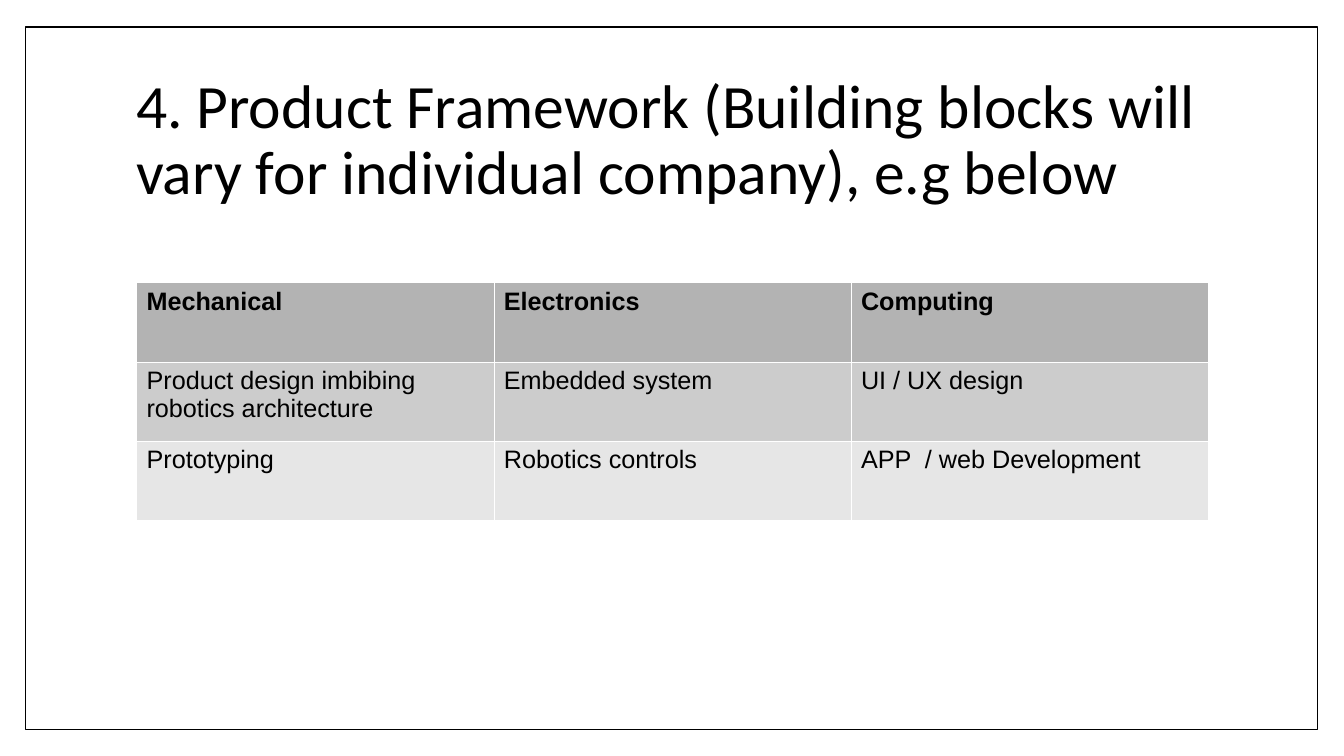
from lxml import etree
from pptx import Presentation
from pptx.dml.color import RGBColor
from pptx.enum.shapes import MSO_SHAPE
from pptx.enum.text import MSO_ANCHOR, MSO_AUTO_SIZE, PP_ALIGN
from pptx.oxml.ns import qn
from pptx.util import Pt

RECTANGLE = MSO_SHAPE.RECTANGLE
MIDDLE = MSO_ANCHOR.MIDDLE
NO_AUTOFIT = MSO_AUTO_SIZE.NONE
LEFT = PP_ALIGN.LEFT
TITLE_ONLY = 5

COLORS = {
    "black": "000000",
    "white": "FFFFFF",
    "header": "B3B3B3",
    "odd": "CCCCCC",
    "even": "E6E6E6",
}

FRAMEWORK = [
    ["Mechanical", "Electronics", "Computing"],
    ["Product design imbibing robotics architecture", "Embedded system", "UI / UX design"],
    ["Prototyping", "Robotics controls", "APP  / web Development"],
]


def rgb(name):
    return RGBColor.from_string(COLORS[name])


class SlideBuilder:
    title_font = "Calibri"
    body_font = "Arial"
    border_width = Pt(0.06)

    def __init__(self, prs):
        self.s = prs.slides.add_slide(prs.slide_layouts[TITLE_ONLY])

    def style(self, p, name, size, bold=False):
        p.alignment = LEFT
        p.font.name = name
        p.font.size = Pt(size)
        p.font.bold = bold
        p.font.color.rgb = rgb("black")

    def frame(self, x, y, w, h):
        sp = self.s.shapes.add_shape(RECTANGLE, Pt(x), Pt(y), Pt(w), Pt(h))
        sp.shadow.inherit = False
        sp.fill.solid()
        sp.fill.fore_color.rgb = rgb("white")
        sp.line.color.rgb = rgb("black")
        sp.line.width = Pt(1)
        self.s.shapes.element.insert(2, sp.element)

    def title(self, text, x, y, w, h):
        sp = self.s.shapes.title
        sp.left, sp.top, sp.width, sp.height = Pt(x), Pt(y), Pt(w), Pt(h)
        tf = sp.text_frame
        tf.text = text
        tf.word_wrap = True
        tf.auto_size = NO_AUTOFIT
        tf.vertical_anchor = MIDDLE
        p = tf.paragraphs[0]
        p.line_spacing = 0.9
        self.style(p, self.title_font, 44)

    def borders(self, cell):
        tc_pr = cell._tc.get_or_add_tcPr()
        for side in ("lnL", "lnR", "lnT", "lnB"):
            ln = etree.SubElement(tc_pr, qn(f"a:{side}"), w=str(self.border_width))
            fill = etree.SubElement(ln, qn("a:solidFill"))
            etree.SubElement(fill, qn("a:srgbClr"), val=COLORS["white"])

    def table(self, rows, fills, x, y, w, h):
        shape = self.s.shapes.add_table(len(rows), len(rows[0]), Pt(x), Pt(y), Pt(w), Pt(h))
        for r, (texts, fill) in enumerate(zip(rows, fills)):
            for c, text in enumerate(texts):
                cell = shape.table.cell(r, c)
                cell.text = text
                self.style(cell.text_frame.paragraphs[0], self.body_font, 18, bold=r == 0)
                self.borders(cell)
                cell.fill.solid()
                cell.fill.fore_color.rgb = rgb(fill)


def main():
    prs = Presentation()
    prs.slide_width, prs.slide_height = Pt(960), Pt(540)
    slide = SlideBuilder(prs)
    slide.frame(18, 19.2, 923, 502)
    slide.title(
        "4. Product Framework (Building blocks will vary for individual company), e.g below",
        90, 48, 777.6, 106.4,
    )
    slide.table(FRAMEWORK, ["header", "odd", "even"], 97.5, 201.6, 765.6, 170)
    prs.save("out.pptx")


if __name__ == "__main__":
    main()
